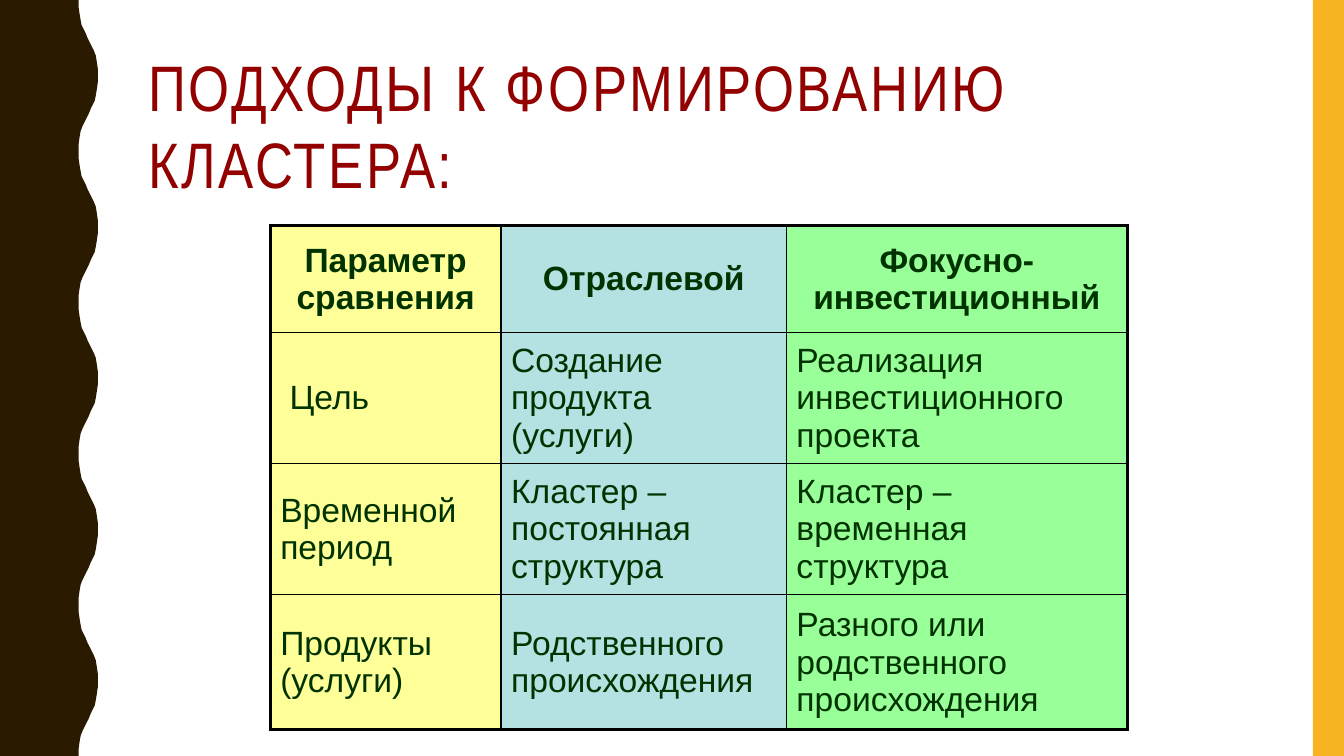
import dataclasses
import pptx
import pptx.dml.color
import pptx.enum.shapes
import pptx.enum.text
import pptx.oxml
import pptx.oxml.ns
import pptx.util
from pptx.util import Inches

ANCHOR = pptx.enum.text.MSO_ANCHOR
ALIGN = pptx.enum.text.PP_ALIGN


@dataclasses.dataclass(frozen=True)
class Theme:
    wave: str = "2A1A00"
    stripe: str = "F8B323"
    title: str = "920000"
    body: str = "003300"
    border: str = "000000"
    columns: tuple = ("FFFF99", "B4E1E2", "99FF99")
    title_font: str = "Arial Narrow"
    body_font: str = "Arial"
    title_size: float = 45.9
    body_size: float = 24
    outer_line: float = 2.25
    inner_line: float = 1


THEME = Theme()

ROWS = (
    ("Параметр сравнения", "Отраслевой", "Фокусно-инвестиционный"),
    (" Цель", "Создание продукта (услуги)", "Реализация инвестиционного проекта"),
    ("Временной период", "Кластер – постоянная структура", "Кластер – временная структура"),
    ("Продукты (услуги)", "Родственного происхождения", "Разного или родственного происхождения"),
)
COLUMN_WIDTHS = (2.29, 2.83, 3.38)
ROW_HEIGHTS = (1.06, 1.23, 1.26, 1.34)

# Rising half of one wave: distance down the edge, distance from the left
WAVE_RISE = (
    (0, 0.78), (0.07, 0.78), (0.14, 0.79), (0.2, 0.8), (0.25, 0.81),
    (0.29, 0.83), (0.33, 0.85), (0.38, 0.87), (0.42, 0.89), (0.46, 0.91),
    (0.5, 0.93), (0.55, 0.95), (0.61, 0.96), (0.68, 0.97),
)
HALF_WAVE = 0.75
WAVE_EXTENT = 1.75  # trough plus crest


def color(value):
    return pptx.dml.color.RGBColor.from_string(value)


def write(frame, text, *, font, size, ink, bold=False, align=ALIGN.LEFT, spacing=0):
    """Put one formatted paragraph in a text frame; spacing is in points."""
    frame.word_wrap = True
    para = frame.paragraphs[0]
    para.alignment = align
    span = para.add_run()
    span.text = text
    span.font.name = font
    span.font.size = pptx.util.Pt(size)
    span.font.bold = bold
    span.font.color.rgb = color(ink)
    if spacing:
        span.font._element.set("spc", str(spacing * 100))


def paint(shape, fill):
    shape.shadow.inherit = False
    shape.fill.solid()
    shape.fill.fore_color.rgb = color(fill)
    shape.line.fill.background()


def add_wavy_edge(page, left, top, height):
    points = [(0, 0)]
    for half in range(round(height / HALF_WAVE)):
        for down, across in WAVE_RISE:
            across = WAVE_EXTENT - across if half % 2 else across
            points.append((across, half * HALF_WAVE + down))
    points += [(WAVE_RISE[0][1], height), (0, height)]
    corners = [(Inches(left + x), Inches(top + y)) for x, y in points]
    outline = page.shapes.build_freeform(*corners[0])
    outline.add_line_segments(corners[1:], close=True)
    paint(outline.convert_to_shape(), THEME.wave)


def add_stripe(page, left, top, width, height):
    stripe = page.shapes.add_shape(
        pptx.enum.shapes.MSO_SHAPE.RECTANGLE,
        Inches(left), Inches(top), Inches(width), Inches(height))
    paint(stripe, THEME.stripe)


def add_title(page, left, top, width, height):
    box = page.shapes.add_textbox(Inches(left), Inches(top), Inches(width), Inches(height))
    box.text_frame.vertical_anchor = ANCHOR.MIDDLE
    write(box.text_frame, "ПОДХОДЫ К ФОРМИРОВАНИЮ КЛАСТЕРА:", font=THEME.title_font,
          size=THEME.title_size, ink=THEME.title, spacing=2)


def set_borders(cell, outer_sides):
    """Draw all four borders, heavier on the sides at the table's rim."""
    for side in "LRTB":
        points = THEME.outer_line if side in outer_sides else THEME.inner_line
        cell._tc.get_or_add_tcPr().append(pptx.oxml.parse_xml(
            f'<a:ln{side} {pptx.oxml.ns.nsdecls("a")} w="{pptx.util.Pt(points)}">'
            f'<a:solidFill><a:srgbClr val="{THEME.border}"/></a:solidFill></a:ln{side}>'))


def add_comparison(page, left, top):
    table = page.shapes.add_table(
        len(ROWS), len(COLUMN_WIDTHS), Inches(left), Inches(top),
        Inches(sum(COLUMN_WIDTHS)), Inches(sum(ROW_HEIGHTS))).table
    for column, width in zip(table.columns, COLUMN_WIDTHS):
        column.width = Inches(width)
    for row, height in zip(table.rows, ROW_HEIGHTS):
        row.height = Inches(height)
    last_row, last_column = len(ROWS) - 1, len(COLUMN_WIDTHS) - 1
    for r, texts in enumerate(ROWS):
        for c, text in enumerate(texts):
            cell = table.cell(r, c)
            rim = {"T": r == 0, "B": r == last_row, "L": c == 0, "R": c == last_column}
            set_borders(cell, [side for side, outer in rim.items() if outer])
            cell.fill.solid()
            cell.fill.fore_color.rgb = color(THEME.columns[c])
            cell.vertical_anchor = ANCHOR.MIDDLE
            write(cell.text_frame, text, font=THEME.body_font, size=THEME.body_size,
                  ink=THEME.body, bold=r == 0, align=ALIGN.LEFT if r else ALIGN.CENTER)


def main():
    deck = pptx.Presentation()
    deck.slide_width, deck.slide_height = Inches(13.33), Inches(7.5)
    page = deck.slides.add_slide(deck.slide_layouts[6])
    add_wavy_edge(page, 0, 0, 7.5)
    add_stripe(page, 13.02, 0, 0.31, 7.5)
    add_title(page, 1.37, 0.42, 11.13, 1.63)
    add_comparison(page, 2.68, 2.24)
    deck.save("out.pptx")


if __name__ == "__main__":
    main()
